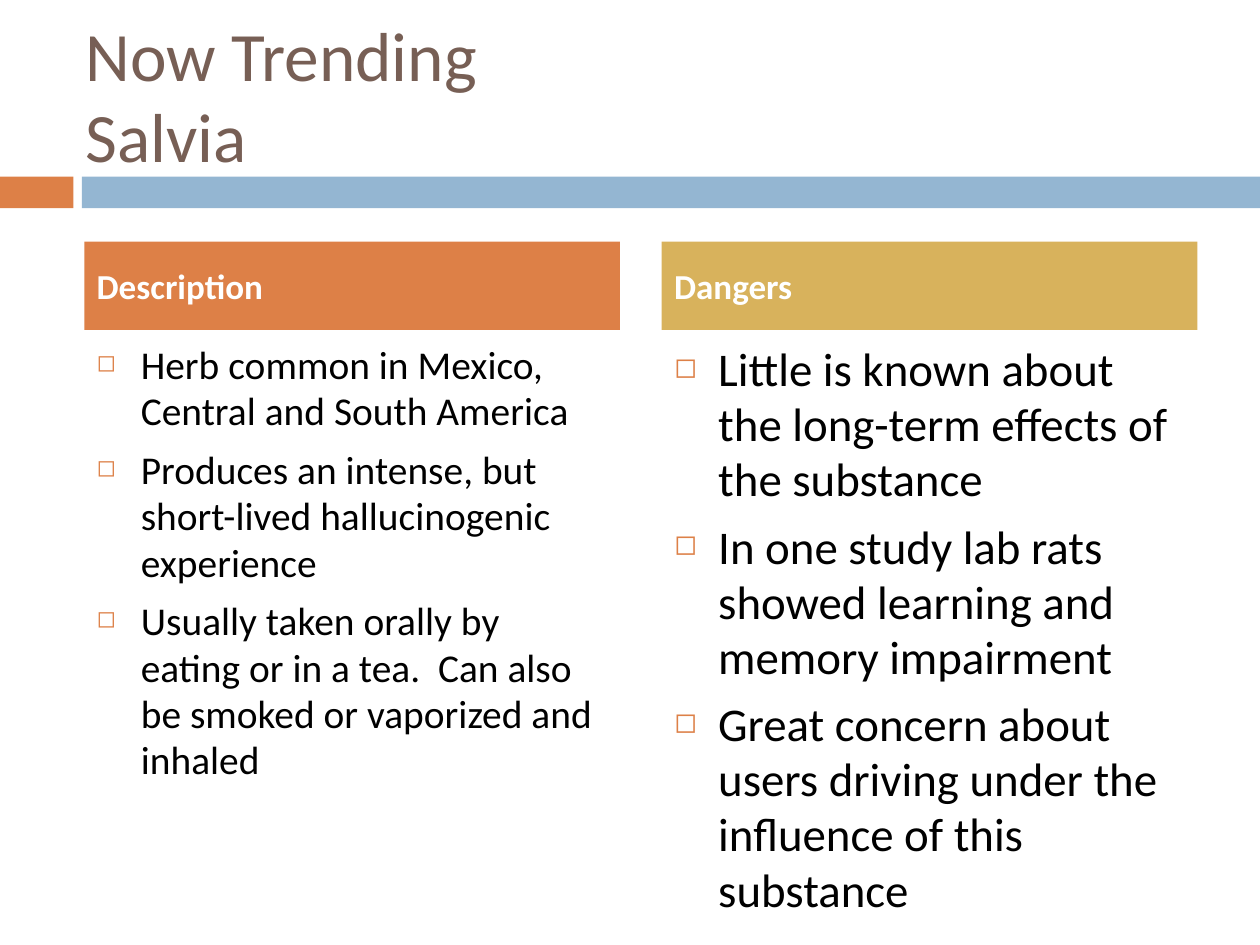
import pptx
import pptx.dml.color
import pptx.enum.shapes
import pptx.enum.text
import pptx.util
import lxml.etree
import pptx.oxml.ns

Cm = pptx.util.Cm
Pt = pptx.util.Pt
RGBColor = pptx.dml.color.RGBColor
ANCHOR = pptx.enum.text.MSO_ANCHOR

ORANGE = RGBColor(0xDD, 0x80, 0x47)
BLUE = RGBColor(0x94, 0xB6, 0xD2)
GOLD = RGBColor(0xD8, 0xB2, 0x5C)
BROWN = RGBColor(0x77, 0x5F, 0x55)
BLACK = RGBColor(0, 0, 0)
WHITE = RGBColor(0xFF, 0xFF, 0xFF)

COLUMN_WIDTH = 10.8
INDENT = Cm(0.89)


def add_bar(left, top, width, height, color):
    bar = page.shapes.add_shape(pptx.enum.shapes.MSO_SHAPE.RECTANGLE,
                                Cm(left), Cm(top), Cm(width), Cm(height))
    bar.shadow.inherit = False
    bar.fill.solid()
    bar.fill.fore_color.rgb = color
    bar.line.fill.background()
    return bar


def add_span(para, text, size, color, bold=False):
    para.alignment = pptx.enum.text.PP_ALIGN.LEFT
    span = para.add_run()
    span.text = text
    span.font.name = "Calibri"
    span.font.size = Pt(size)
    span.font.bold = bold
    span.font.color.rgb = color


deck = pptx.Presentation()
deck.slide_width = Cm(25.4)
deck.slide_height = Cm(19.05)
page = deck.slides.add_slide(deck.slide_layouts[6])

# Band under the title
add_bar(0, 3.56, 1.48, 0.64, ORANGE)
add_bar(1.65, 3.56, 23.75, 0.64, BLUE)

# Title
title = page.shapes.add_textbox(Cm(1.48), Cm(0.76), Cm(22.66), Cm(2.41))
title.text_frame.word_wrap = True
title.text_frame.vertical_anchor = ANCHOR.MIDDLE
para = title.text_frame.paragraphs[0]
para.line_spacing = 0.98
add_span(para, "Now Trending", 39.6, BROWN)
para.add_line_break()
add_span(para, "Salvia", 39.6, BROWN)

# Two columns: left edge, heading, heading colour, text size, points
columns = [
    (1.7, "Description", ORANGE, 22.5, [
        "Herb common in Mexico, Central and South America",
        "Produces an intense, but short-lived hallucinogenic experience",
        "Usually taken orally by eating or in a tea.  Can also be smoked or vaporized and inhaled",
    ]),
    (13.34, "Dangers", GOLD, 26.8, [
        "Little is known about the long-term effects of the substance",
        "In one study lab rats showed learning and memory impairment",
        "Great concern about users driving under the influence of this substance",
    ]),
]
for left, heading, color, size, points in columns:
    # Heading
    header = add_bar(left, 4.87, COLUMN_WIDTH, 1.78, color)
    header.text_frame.word_wrap = True
    header.text_frame.vertical_anchor = ANCHOR.MIDDLE
    add_span(header.text_frame.paragraphs[0], heading, 20, WHITE, True)

    # Bulleted points
    box = page.shapes.add_textbox(Cm(left), Cm(6.78), Cm(COLUMN_WIDTH), Cm(9.96))
    frame = box.text_frame
    frame.word_wrap = True
    for number, point in enumerate(points):
        para = frame.add_paragraph() if number else frame.paragraphs[0]
        para.space_before = Pt(7)
        para.line_spacing = 0.98
        add_span(para, point, size, BLACK)
        properties = para._p.get_or_add_pPr()
        properties.set("marL", str(INDENT))
        properties.set("indent", str(-INDENT))
        qn = pptx.oxml.ns.qn
        bullet_color = lxml.etree.SubElement(properties, qn("a:buClr"))
        lxml.etree.SubElement(bullet_color, qn("a:srgbClr"), val=str(ORANGE))
        lxml.etree.SubElement(properties, qn("a:buSzPct"), val="60000")
        lxml.etree.SubElement(properties, qn("a:buChar"), char="◻")

deck.save("out.pptx")
